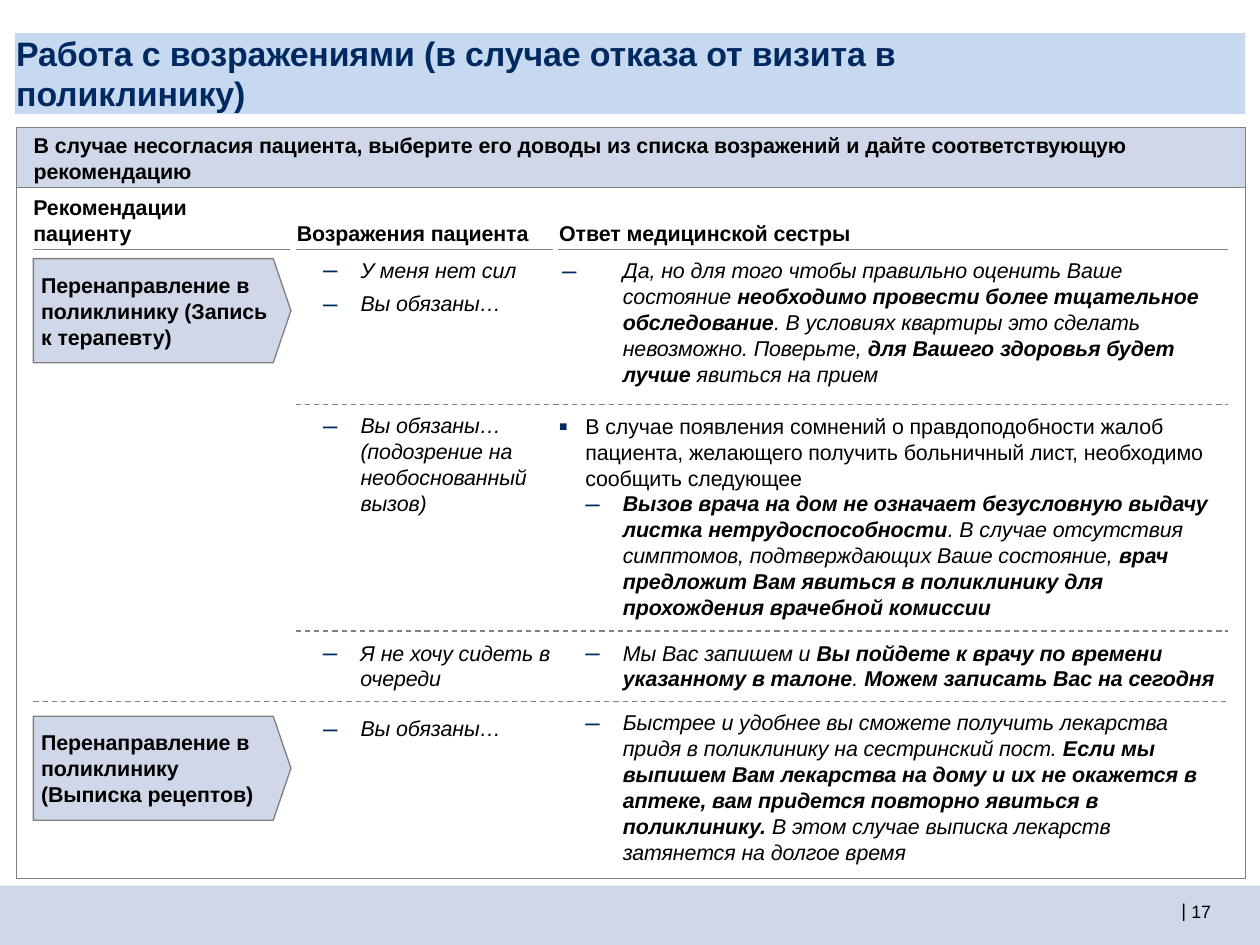
from lxml import etree
from pptx import Presentation
from pptx.dml.color import RGBColor
from pptx.enum.dml import MSO_LINE_DASH_STYLE as DASH
from pptx.enum.shapes import MSO_CONNECTOR as CONNECTOR, MSO_SHAPE as SHAPE
from pptx.enum.text import MSO_ANCHOR as ANCHOR, MSO_AUTO_SIZE as AUTO, PP_ALIGN as ALIGN
from pptx.oxml.ns import qn
from pptx.util import Pt

NAVY, PALE, SKY, GREY, BLACK = "00295F", "D0D7E8", "C6D9F1", "808080", "000000"
BOLD = {"bold": True}
ITALIC = {"italic": True}
rgb = RGBColor.from_string


def write(holder, paragraphs, look, size=12, colour=BLACK, leading=14.5, gap=0,
          insets=(0, 0), anchor=ANCHOR.TOP, bullet=None):
    """Fill a shape with text; *stars* mark bold, bullet is (sign, percent, indent)."""
    frame = holder.text_frame
    frame_format = {"word_wrap": True, "auto_size": AUTO.NONE, "vertical_anchor": anchor,
                    "margin_left": Pt(insets[0]), "margin_right": Pt(insets[1]),
                    "margin_top": 0, "margin_bottom": 0}
    for name, value in frame_format.items():
        setattr(frame, name, value)
    for number, text in enumerate(paragraphs):
        paragraph = frame.paragraphs[0] if number == 0 else frame.add_paragraph()
        paragraph.alignment = ALIGN.LEFT
        paragraph.line_spacing = Pt(leading)
        paragraph.space_before = Pt(gap if number else 0)
        if bullet:
            sign, percent, indent = bullet
            props = paragraph._p.get_or_add_pPr()
            props.set("marL", str(Pt(indent)))
            props.set("indent", str(Pt(1 - indent)))
            bullet_colour = etree.SubElement(props, qn("a:buClr"))
            etree.SubElement(bullet_colour, qn("a:srgbClr"), val=NAVY)
            etree.SubElement(props, qn("a:buSzPct"), val=str(percent * 1000))
            etree.SubElement(props, qn("a:buFont"), typeface="Arial")
            etree.SubElement(props, qn("a:buChar"), char=sign)
        for part, words in enumerate(text.split("*")):
            if not words:
                continue
            run = paragraph.add_run()
            run.text = words
            font_format = {"name": "Arial", "size": Pt(size), "bold": False, **look}
            if part % 2:
                font_format["bold"] = True
            for name, value in font_format.items():
                setattr(run.font, name, value)
            run.font.color.rgb = rgb(colour)
            run._r.get_or_add_rPr().set("spc", "-5")


def block(kind, left, top, width, height, fill=None, line=GREY):
    shape = slide.shapes.add_shape(kind, Pt(left), Pt(top), Pt(width), Pt(height))
    shape.shadow.inherit = False
    if fill:
        shape.fill.solid()
        shape.fill.fore_color.rgb = rgb(fill)
    else:
        shape.fill.background()
    if line:
        shape.line.color.rgb = rgb(line)
        shape.line.width = Pt(0.75)
    else:
        shape.line.fill.background()
    return shape


deck = Presentation()
deck.slide_width, deck.slide_height = Pt(706), Pt(529.5)
slide = deck.slides.add_slide(deck.slide_layouts[5])

# Title
title = slide.shapes.title
title_place = {"left": 8.4, "top": 18.5, "width": 689.3, "height": 45.4}
for side, length in title_place.items():
    setattr(title, side, Pt(length))
title.fill.solid()
title.fill.fore_color.rgb = rgb(SKY)
write(title, ["Работа с возражениями (в случае отказа от визита в", "поликлинику)"],
      BOLD, size=19, colour=NAVY, leading=22.4, insets=(0.7, 0))

# Footer, frame and instruction band
block(SHAPE.RECTANGLE, 0, 496.3, 706, 33.2, PALE, None)
instruction = block(SHAPE.RECTANGLE, 9.4, 71.5, 688.5, 33.8, PALE)
write(instruction, ["В случае несогласия пациента, выберите его доводы из списка возражений "
                    "и дайте соответствующую рекомендацию"],
      BOLD, insets=(9.4, 10), anchor=ANCHOR.MIDDLE)
block(SHAPE.RECTANGLE, 9.4, 71.5, 688.5, 421)

# Column heads
for heading, left, width in [("Рекомендации пациенту", 18.7, 120),
                             ("Возражения пациента", 166.3, 144),
                             ("Ответ медицинской сестры", 313.3, 370)]:
    head = slide.shapes.add_textbox(Pt(left), Pt(108.6), Pt(width), Pt(29))
    write(head, [heading], BOLD, anchor=ANCHOR.BOTTOM)

# Rules under the heads and dashed rules between the rows
for start, end, y, dashed in [(18.7, 162.7, 139.7, False), (165.6, 309.6, 139.7, False),
                              (312.5, 688.3, 139.7, False), (165.6, 688.3, 226.8, True),
                              (165.6, 688.3, 353.5, True), (18.7, 688.3, 393.1, True)]:
    rule = slide.shapes.add_connector(CONNECTOR.STRAIGHT, Pt(start), Pt(y), Pt(end), Pt(y))
    rule.line.color.rgb = rgb(GREY)
    rule.line.width = Pt(0.75)
    if dashed:
        rule.line.dash_style = DASH.DASH
    etree.SubElement(rule._element.spPr, qn("a:effectLst"))

# Recommendations
for top, recommendation in [(144.9, "Перенаправление в поликлинику (Запись к терапевту)"),
                            (401.3, "Перенаправление в поликлинику (Выписка рецептов)")]:
    arrow = block(SHAPE.PENTAGON, 18.7, top, 144.3, 58.3, PALE)
    arrow.adjustments[0] = 0.17
    write(arrow, [recommendation], BOLD, insets=(4.3, 6), anchor=ANCHOR.MIDDLE)

# Objections and answers
DASH_ITEM = ("–", 121, 22)
WIDE_DASH_ITEM = ("–", 121, 35)
SQUARE_ITEM = ("▪", 125, 16)
replies = [
    (180, 144, 126, 36, DASH_ITEM, ITALIC, ["У меня нет сил", "Вы обязаны…"]),
    (314, 144, 362, 73, WIDE_DASH_ITEM, ITALIC, [
        "Да, но для того чтобы правильно оценить Ваше состояние *необходимо провести более "
        "тщательное обследование*. В условиях квартиры это сделать невозможно. Поверьте, "
        "*для Вашего здоровья будет лучше* явиться на прием"]),
    (180, 230.9, 120, 58, DASH_ITEM, ITALIC,
     ["Вы обязаны… (подозрение на необоснованный вызов)"]),
    (312, 231.4, 368, 43, SQUARE_ITEM, {}, [
        "В случае появления сомнений о правдоподобности жалоб пациента, желающего получить "
        "больничный лист, необходимо сообщить следующее"]),
    (327, 274.6, 354, 73, DASH_ITEM, ITALIC, [
        "*Вызов врача на дом не означает безусловную выдачу листка нетрудоспособности*. "
        "В случае отсутствия симптомов, подтверждающих Ваше состояние, *врач предложит Вам "
        "явиться в поликлинику для прохождения врачебной комиссии*"]),
    (180, 358.3, 133, 29, DASH_ITEM, ITALIC, ["Я не хочу сидеть в очереди"]),
    (327, 358.3, 360, 29, DASH_ITEM, ITALIC, [
        "Мы Вас запишем и *Вы пойдете к врачу по времени указанному в талоне*. "
        "*Можем записать Вас на сегодня*"]),
    (180, 400.8, 120, 18, DASH_ITEM, ITALIC, ["Вы обязаны…"]),
    (327, 397.4, 349, 87, DASH_ITEM, ITALIC, [
        "Быстрее и удобнее вы сможете получить лекарства придя в поликлинику на сестринский "
        "пост. *Если мы выпишем Вам лекарства на дому и их не окажется в аптеке, вам придется "
        "повторно явиться в поликлинику.* В этом случае выписка лекарств затянется на долгое "
        "время"]),
]
for left, top, width, height, bullet, look, lines in replies:
    reply = slide.shapes.add_textbox(Pt(left), Pt(top), Pt(width), Pt(height))
    write(reply, lines, look, gap=4, bullet=bullet)

# Page number, after a raised bar
page = slide.shapes.add_textbox(Pt(662), Pt(504.4), Pt(30), Pt(14.4))
write(page, ["| "], {}, size=18, leading=13.7)
page_line = page.text_frame.paragraphs[0]
page_line.runs[0]._r.get_or_add_rPr().set("baseline", "2000")
page_number = page_line.add_run()
page_number.text = "17"
for name, value in {"name": "Arial", "size": Pt(10)}.items():
    setattr(page_number.font, name, value)
page_number.font.color.rgb = rgb(BLACK)

deck.save("out.pptx")
